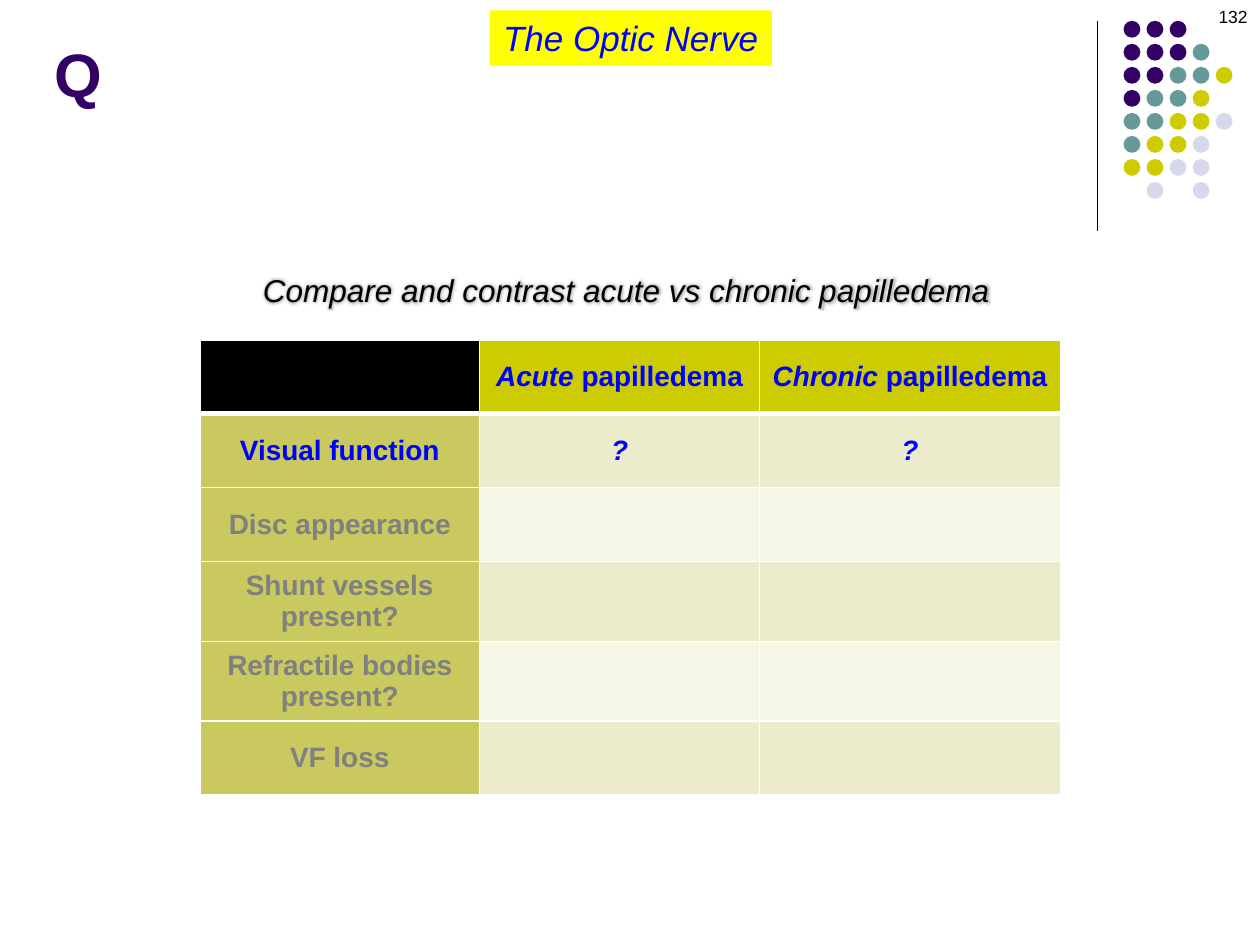
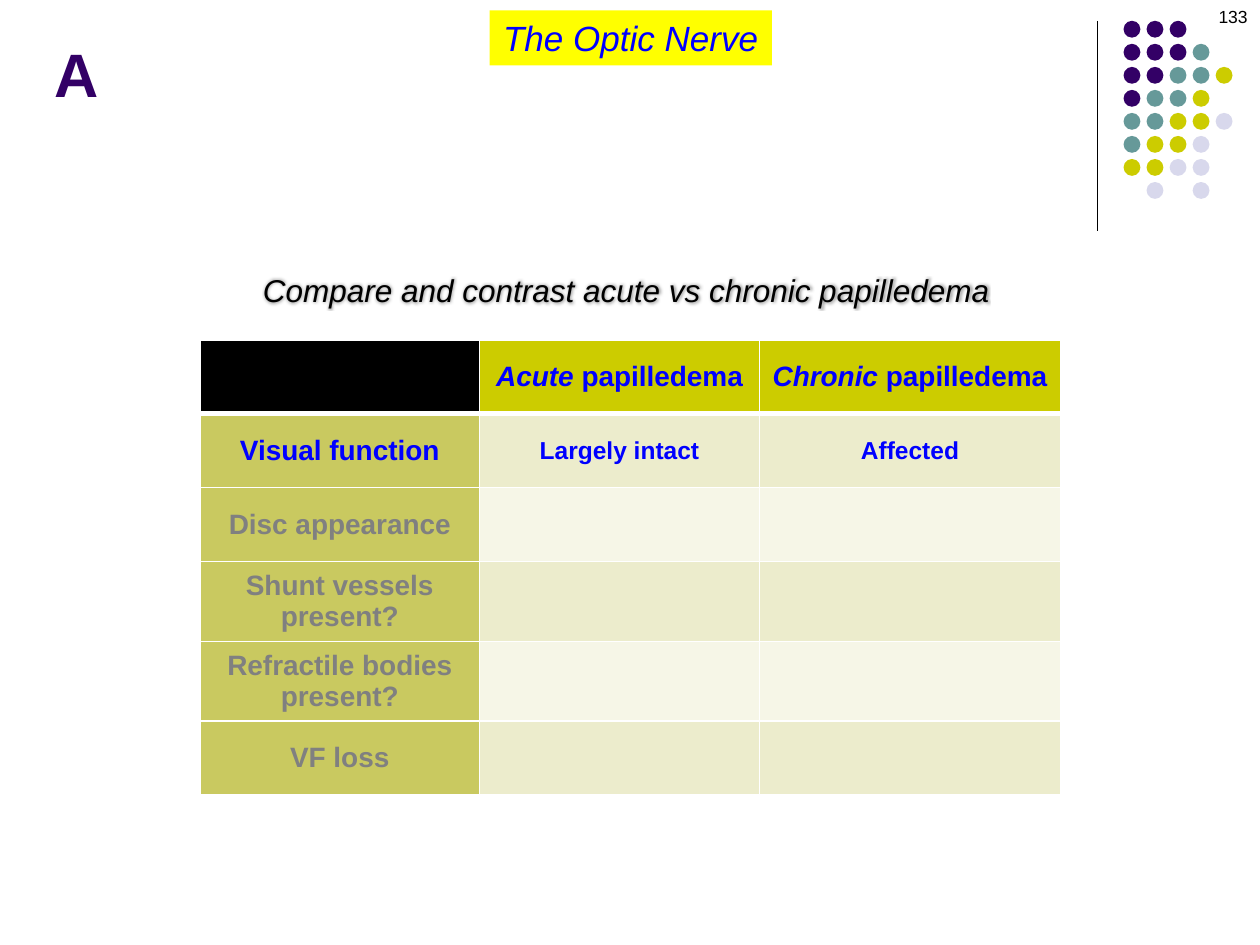
import dataclasses
import typing

import lxml.etree
import pptx
import pptx.dml.color
import pptx.enum.shapes
import pptx.enum.text
import pptx.oxml.ns
import pptx.util

Cm = pptx.util.Cm
Pt = pptx.util.Pt
qn = pptx.oxml.ns.qn
ALIGN = pptx.enum.text.PP_ALIGN
ANCHOR = pptx.enum.text.MSO_ANCHOR
AUTOSIZE = pptx.enum.text.MSO_AUTO_SIZE


# Theme: colours and type sizes
@dataclasses.dataclass(frozen=True)
class Theme:
    font: str = "Arial"
    black: str = "000000"
    white: str = "FFFFFF"
    purple: str = "330066"
    teal: str = "669999"
    olive: str = "CCCC00"
    lavender: str = "D8D8EC"
    yellow: str = "FFFF00"
    blue: str = "0000FF"
    grey: str = "808080"
    label_fill: str = "C9C960"
    band_fills: tuple[str, str] = ("ECECCC", "F6F6E7")
    title_size: int = 35
    topic_size: int = 20
    prompt_size: int = 18
    table_size: int = 16
    answer_size: int = 14
    number_size: int = 10


THEME = Theme()


@dataclasses.dataclass(frozen=True)
class Box:
    """Position and size in centimetres."""
    left: float
    top: float
    width: float
    height: float

    def lengths(self) -> tuple[int, ...]:
        return tuple(Cm(value) for value in dataclasses.astuple(self))


@dataclasses.dataclass(frozen=True)
class Words:
    text: str
    size: int
    color: str
    bold: bool = False
    italic: bool = False


@dataclasses.dataclass(frozen=True)
class Card:
    title: str
    number: str
    answers: tuple[Words, Words]


# Content
TOPIC = Words("The Optic Nerve", THEME.topic_size, THEME.blue, italic=True)
PROMPT = Words("Compare and contrast acute vs chronic papilledema",
               THEME.prompt_size, THEME.black, italic=True)
STAGES = ("Acute", "Chronic")
FEATURES = ("Visual function", "Disc appearance", "Shunt vessels present?",
            "Refractile bodies present?", "VF loss")
ACTIVE_FEATURE = "Visual function"


def table_words(text: str, size: int = THEME.table_size,
                color: str = THEME.blue, italic: bool = False) -> Words:
    return Words(text, size, color, bold=True, italic=italic)


UNKNOWN = table_words("?", italic=True)
CARDS = (
    Card("Q", "132", (UNKNOWN, UNKNOWN)),
    Card("A", "133", (table_words("Largely intact", THEME.answer_size),
                      table_words("Affected", THEME.answer_size))),
)

# Layout
TITLE_BOX = Box(0.85, 1, 20.96, 1.35)
NUMBER_BOX = Box(19.47, 0, 5.93, 1.27)
TOPIC_BOX = Box(9.87, 0.21, 5.69, 1.11)
PROMPT_BOX = Box(5.05, 5.33, 15.3, 1.02)
COLUMN_WIDTHS = (5.64, 5.64, 6.07)
ROW_HEIGHT = 1.49
TABLE_BOX = Box(4.03, 6.85, sum(COLUMN_WIDTHS), ROW_HEIGHT * (len(FEATURES) + 1))
RULE_X, RULE_TOP, RULE_BOTTOM = 22.12, 0.42, 4.65

# Dot pattern: one letter per dot, a space for a gap
DOT_ROWS = ("PPP", "PPPT", "PPTTO", "PTTO", "TTOOL", "TOOL", "OOLL", " L L")
DOT_COLORS = {"P": THEME.purple, "T": THEME.teal,
              "O": THEME.olive, "L": THEME.lavender}
DOT_LEFT, DOT_TOP, DOT_SIZE = 22.65, 0.42, 0.34
DOT_PITCH = 3.25 / (len(DOT_ROWS) - 1)


def rgb(color: str) -> pptx.dml.color.RGBColor:
    return pptx.dml.color.RGBColor.from_string(color)


def write(frame: typing.Any, *parts: Words, align: typing.Any = ALIGN.LEFT) -> None:
    """Write the parts as runs of the frame's first paragraph."""
    paragraph = frame.paragraphs[0]
    paragraph.alignment = align
    for part in parts:
        run = paragraph.add_run()
        run.text = part.text
        formats = {"name": THEME.font, "size": Pt(part.size),
                   "bold": part.bold, "italic": part.italic}
        for key, value in formats.items():
            setattr(run.font, key, value)
        run.font.color.rgb = rgb(part.color)


def set_frame(frame: typing.Any, **formats: typing.Any) -> None:
    for key, value in formats.items():
        setattr(frame, key, value)


def add_preset(shapes: typing.Any, preset: typing.Any, box: Box, color: str) -> typing.Any:
    shape = shapes.add_shape(preset, *box.lengths())
    shape.shadow.inherit = False
    shape.fill.solid()
    shape.fill.fore_color.rgb = rgb(color)
    shape.line.fill.background()
    return shape


def add_glow(run: typing.Any, radius: int, color: str, opacity: int) -> None:
    """Put a soft glow behind a run; opacity is in percent."""
    effects = lxml.etree.Element(qn("a:effectLst"))
    glow = lxml.etree.SubElement(effects, qn("a:glow"), rad=str(radius))
    tint = lxml.etree.SubElement(glow, qn("a:srgbClr"), val=color)
    lxml.etree.SubElement(tint, qn("a:alpha"), val=str(opacity * 1000))
    run.font.fill._xPr.find(qn("a:solidFill")).addnext(effects)


# Shared decoration
def draw_corner(slide: typing.Any) -> None:
    rule = slide.shapes.add_connector(
        pptx.enum.shapes.MSO_CONNECTOR.STRAIGHT,
        Cm(RULE_X), Cm(RULE_TOP), Cm(RULE_X), Cm(RULE_BOTTOM))
    rule.line.color.rgb = rgb(THEME.black)
    rule.line.width = Pt(0.75)
    properties = rule._element.find(qn("p:spPr"))
    lxml.etree.SubElement(properties, qn("a:effectLst"))

    dots = slide.shapes.add_group_shape()
    for row, letters in enumerate(DOT_ROWS):
        for column, letter in enumerate(letters):
            if letter in DOT_COLORS:
                box = Box(DOT_LEFT + column * DOT_PITCH, DOT_TOP + row * DOT_PITCH,
                          DOT_SIZE, DOT_SIZE)
                add_preset(dots.shapes, pptx.enum.shapes.MSO_SHAPE.OVAL,
                           box, DOT_COLORS[letter])


def draw_headings(slide: typing.Any, card: Card) -> None:
    number = slide.shapes.add_textbox(*NUMBER_BOX.lengths()).text_frame
    set_frame(number, word_wrap=True)
    write(number, Words(card.number, THEME.number_size, THEME.black), align=ALIGN.RIGHT)

    title = slide.shapes.title
    title.left, title.top, title.width, title.height = TITLE_BOX.lengths()
    set_frame(title.text_frame, vertical_anchor=ANCHOR.BOTTOM, auto_size=AUTOSIZE.NONE)
    write(title.text_frame, Words(card.title, THEME.title_size, THEME.purple, bold=True))

    topic = add_preset(slide.shapes, pptx.enum.shapes.MSO_SHAPE.RECTANGLE,
                       TOPIC_BOX, THEME.yellow).text_frame
    set_frame(topic, word_wrap=False, auto_size=AUTOSIZE.SHAPE_TO_FIT_TEXT)
    write(topic, TOPIC, align=ALIGN.CENTER)


def draw_prompt(slide: typing.Any) -> None:
    prompt = slide.shapes.add_textbox(*PROMPT_BOX.lengths()).text_frame
    set_frame(prompt, word_wrap=False, auto_size=AUTOSIZE.SHAPE_TO_FIT_TEXT)
    write(prompt, PROMPT)
    add_glow(prompt.paragraphs[0].runs[0], Pt(5), THEME.black, 40)


# Comparison table
def set_borders(cell: typing.Any, widths: dict[str, float]) -> None:
    properties = cell._tc.get_or_add_tcPr()
    for position, side in enumerate("LRTB"):
        line = lxml.etree.Element(qn(f"a:ln{side}"), w=str(Pt(widths.get(side, 1))))
        fill = lxml.etree.SubElement(line, qn("a:solidFill"))
        lxml.etree.SubElement(fill, qn("a:srgbClr"), val=THEME.white)
        properties.insert(position, line)


def fill_cell(cell: typing.Any, color: str, *parts: Words, **widths: float) -> None:
    cell.fill.solid()
    cell.fill.fore_color.rgb = rgb(color)
    set_borders(cell, widths)
    cell.vertical_anchor = ANCHOR.MIDDLE
    write(cell.text_frame, *parts, align=ALIGN.CENTER)


def draw_comparison(slide: typing.Any, card: Card) -> None:
    comparison = slide.shapes.add_table(
        len(FEATURES) + 1, len(COLUMN_WIDTHS), *TABLE_BOX.lengths()).table
    for column, width in zip(comparison.columns, COLUMN_WIDTHS):
        column.width = Cm(width)
    for row in comparison.rows:
        row.height = Cm(ROW_HEIGHT)

    fill_cell(comparison.cell(0, 0), THEME.black, B=3)
    for column, stage in enumerate(STAGES, start=1):
        fill_cell(comparison.cell(0, column), THEME.olive,
                  table_words(stage, italic=True), table_words(" papilledema"), B=3)

    for row, feature in enumerate(FEATURES, start=1):
        active = feature == ACTIVE_FEATURE
        top = 3 if row == 1 else 1
        label = table_words(feature, color=THEME.blue if active else THEME.grey)
        fill_cell(comparison.cell(row, 0), THEME.label_fill, label, T=top)
        for column, answer in enumerate(card.answers, start=1):
            fill_cell(comparison.cell(row, column), THEME.band_fills[(row - 1) % 2],
                      *((answer,) if active else ()), T=top)


def main() -> None:
    deck = pptx.Presentation()
    deck.slide_width, deck.slide_height = Cm(25.4), Cm(19.05)
    title_only = deck.slide_layouts[5]
    for card in CARDS:
        slide = deck.slides.add_slide(title_only)
        draw_corner(slide)
        draw_headings(slide, card)
        draw_comparison(slide, card)
        draw_prompt(slide)
    deck.save("out.pptx")


if __name__ == "__main__":
    main()
